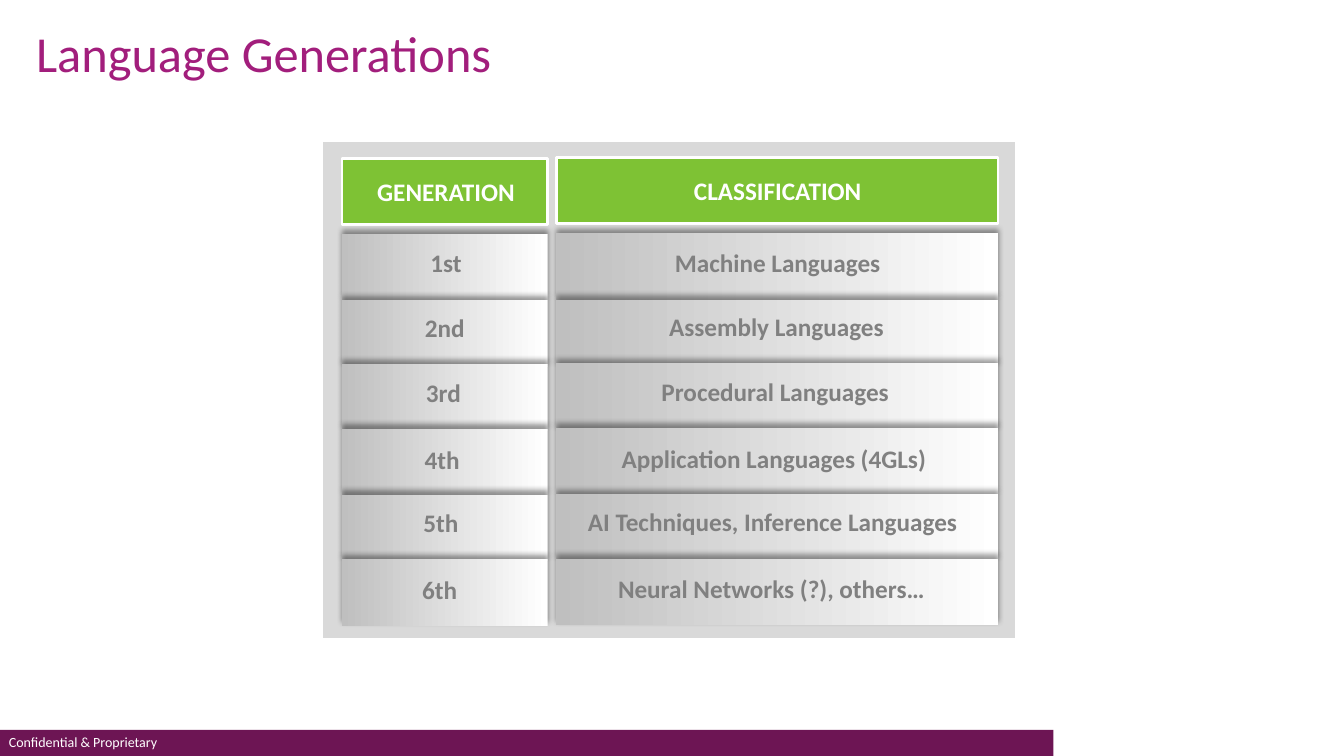
from lxml.etree import SubElement
from pptx import Presentation
from pptx.dml.color import RGBColor
from pptx.enum.shapes import MSO_SHAPE
from pptx.enum.text import MSO_AUTO_SIZE as AUTO_SIZE, PP_ALIGN as ALIGN
from pptx.oxml.ns import qn
from pptx.util import Pt

WHITE = RGBColor(0xFF, 0xFF, 0xFF)
PLUM = RGBColor(0x6D, 0x15, 0x54)
MAGENTA = RGBColor(0xA2, 0x1E, 0x7C)
GREEN = RGBColor(0x7E, 0xC2, 0x34)
PANEL_GRAY = RGBColor(0xD9, 0xD9, 0xD9)
SHADE_GRAY = RGBColor(0xBF, 0xBF, 0xBF)
TEXT_GRAY = RGBColor(0x80, 0x80, 0x80)


def add_box(left, top, width, height, fill=None, outlined=False):
    """Add a rectangle: solid when a fill is given, else a shadowed gradient."""
    shape = slide.shapes.add_shape(
        MSO_SHAPE.RECTANGLE, Pt(left), Pt(top), Pt(width), Pt(height))
    shape.shadow.inherit = False
    if outlined:
        shape.line.color.rgb = WHITE
        shape.line.width = Pt(2)
    else:
        shape.line.fill.background()
    if fill is not None:
        shape.fill.solid()
        shape.fill.fore_color.rgb = fill
        return
    shape.fill.gradient()
    shape.fill.gradient_angle = 180
    for stop, color, position in zip(
            shape.fill.gradient_stops, (WHITE, SHADE_GRAY), (0, 1)):
        stop.color.rgb = color
        stop.position = position
    effects = shape.element.spPr.find(qn("a:effectLst"))
    shadow = SubElement(effects, qn("a:outerShdw"), blurRad=str(Pt(4)),
                        dist=str(Pt(3)), dir="16200000", rotWithShape="0")
    shadow_color = SubElement(shadow, qn("a:srgbClr"), val="000000")
    SubElement(shadow_color, qn("a:alpha"), val="40000")


def add_text(text, left, top, width, height, size, color, bold=False, align=ALIGN.LEFT):
    text_box = slide.shapes.add_textbox(Pt(left), Pt(top), Pt(width), Pt(height))
    frame = text_box.text_frame
    frame.word_wrap = True
    frame.auto_size = AUTO_SIZE.SHAPE_TO_FIT_TEXT
    paragraph = frame.paragraphs[0]
    paragraph.alignment = align
    run = paragraph.add_run()
    run.text = text
    run.font.color.rgb = color
    font_format = {"name": "Calibri", "size": Pt(size), "bold": bold}
    for name, value in font_format.items():
        setattr(run.font, name, value)


presentation = Presentation()
presentation.slide_width = Pt(960)
presentation.slide_height = Pt(540)
slide = presentation.slides.add_slide(presentation.slide_layouts[6])

# Footer and title
add_box(0, 521.3, 752.4, 18.7, PLUM)
add_text("Confidential & Proprietary", -0.7, 520.6, 240.5, 19.4, 10, WHITE)
add_text("Language Generations", 18.7, 12.2, 590.4, 51, 36, MAGENTA)

# Two columns of boxes on a gray panel
add_box(229.7, 100.8, 496.1, 355.7, PANEL_GRAY, outlined=True)

ROW_HEIGHT = 47.5
TEXT_HEIGHT = 29
LABEL_SHIFT = 0.9  # labels step left from row to row
row_tops = [166.5, 214, 259.5, 305.5, 352.8, 399]
label_tops = [172.8, 219, 265, 313, 358, 406]
label_style = {"size": 18, "bold": True, "align": ALIGN.CENTER}

# heading, box left, box width, label left, label width, drop, entries
columns = [
    ("GENERATION", 244.3, 146.9, 250.5, 136.1, 0.6,
     ["1st", "2nd", "3rd", "4th", "5th", "6th"]),
    ("CLASSIFICATION", 397.5, 315.4, 409.7, 291.6, 0,
     ["Machine Languages", "Assembly Languages", "Procedural Languages",
      "Application Languages (4GLs)", "AI Techniques, Inference Languages",
      "Neural Networks (?), others…"]),
]
for heading, left, width, label_left, label_width, drop, entries in columns:
    add_box(left, 112.4 + drop, width, ROW_HEIGHT, GREEN, outlined=True)
    add_text(heading, label_left, 121.7 + drop, label_width, TEXT_HEIGHT,
             color=WHITE, **label_style)
    for row, (entry, top, label_top) in enumerate(zip(entries, row_tops, label_tops)):
        add_box(left, top + drop, width, ROW_HEIGHT)
        add_text(entry, label_left - row * LABEL_SHIFT, label_top + drop,
                 label_width, TEXT_HEIGHT, color=TEXT_GRAY, **label_style)

presentation.save("out.pptx")
